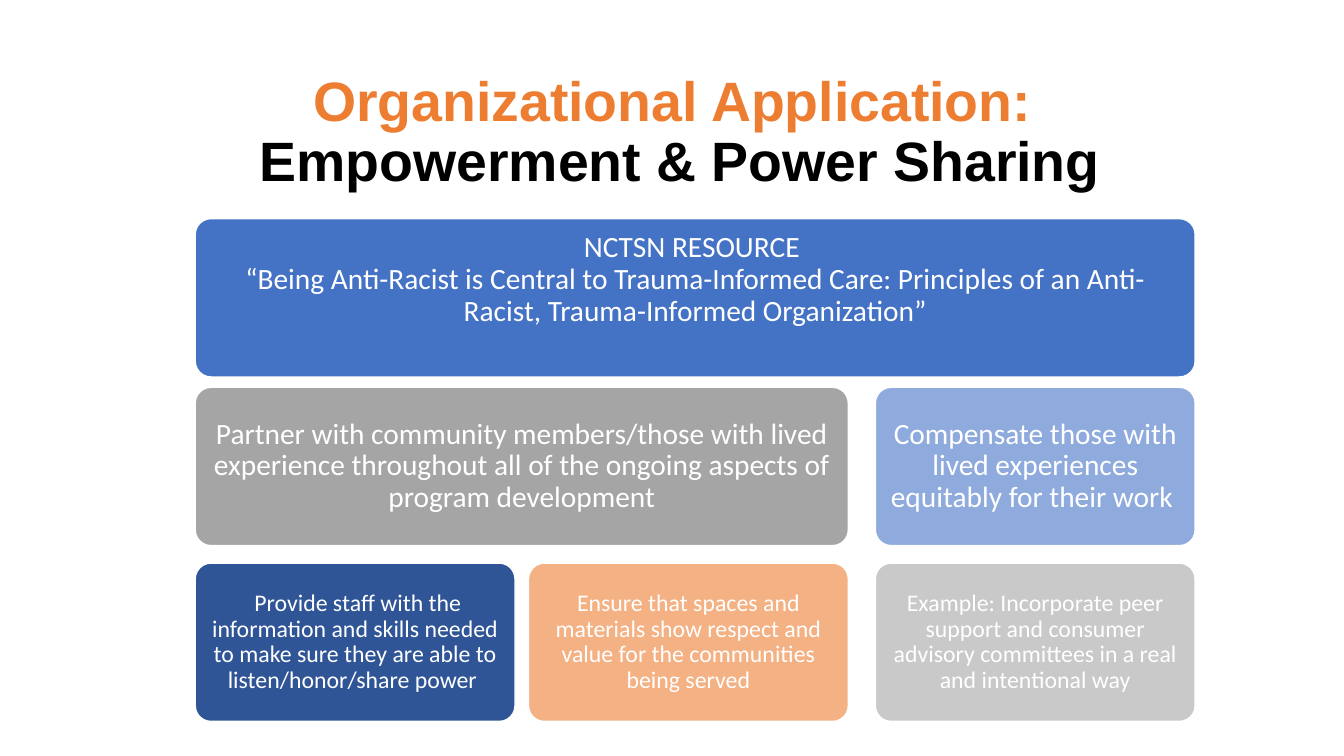
from pptx import Presentation
from pptx.dml.color import RGBColor
from pptx.enum.shapes import MSO_SHAPE
from pptx.enum.text import MSO_ANCHOR, PP_ALIGN
from pptx.util import Cm, Pt

ROUNDED = MSO_SHAPE.ROUNDED_RECTANGLE
MIDDLE = MSO_ANCHOR.MIDDLE
CENTER = PP_ALIGN.CENTER

CARD_WIDTH = 8.06
CARD_HEIGHT = 3.99
PAIR_GAP = 0.34
GROUP_GAP = 0.68
ROW_TOPS = (5.51, 9.76, 14.19)
LARGE, SMALL = 21, 17


def color(hex_string):
    return RGBColor.from_string(hex_string)


def add_lines(text_frame, lines, font_name, size, bold=False):
    text_frame.word_wrap = True
    text_frame.vertical_anchor = MIDDLE
    paragraph = text_frame.paragraphs[0]
    paragraph.alignment = CENTER
    paragraph.line_spacing = 0.9
    for index, (text, text_color) in enumerate(lines):
        if index:
            paragraph.add_line_break()
        run = paragraph.add_run()
        run.text = text
        run.font.name = font_name
        run.font.size = Pt(size)
        run.font.bold = bold
        run.font.color.rgb = color(text_color)


def add_title(slide, left, top, width, height):
    box = slide.shapes.add_textbox(Cm(left), Cm(top), Cm(width), Cm(height))
    lines = [("Organizational Application:", "ED7D31"),
             (" Empowerment & Power Sharing", "000000")]
    add_lines(box.text_frame, lines, "Arial", 39.6, bold=True)


def add_card(slide, left, top, width, fill, size, lines, extra_bottom=0):
    card = slide.shapes.add_shape(ROUNDED, Cm(left), Cm(top), Cm(width), Cm(CARD_HEIGHT))
    card.adjustments[0] = 0.1
    card.shadow.inherit = False
    card.fill.solid()
    card.fill.fore_color.rgb = color(fill)
    card.line.color.rgb = color("FFFFFF")
    card.line.width = Pt(1)
    text_frame = card.text_frame
    inset = 0.23 if size == LARGE else 0.18
    text_frame.margin_left = text_frame.margin_right = text_frame.margin_top = Cm(inset)
    text_frame.margin_bottom = Cm(inset + extra_bottom)
    add_lines(text_frame, [(line, "FFFFFF") for line in lines], "Calibri", size)


def add_hierarchy(slide, left):
    pair_width = 2 * CARD_WIDTH + PAIR_GAP
    second = left + CARD_WIDTH + PAIR_GAP
    third = left + pair_width + GROUP_GAP
    full_width = pair_width + GROUP_GAP + CARD_WIDTH
    resource_row, partner_row, action_row = ROW_TOPS

    add_card(slide, left, resource_row, full_width, "4472C4", LARGE,
             ["NCTSN RESOURCE ",
              "“Being Anti-Racist is Central to Trauma-Informed Care: "
              "Principles of an Anti-Racist, Trauma-Informed Organization”"],
             extra_bottom=0.9)
    add_card(slide, left, partner_row, pair_width, "A5A5A5", LARGE,
             ["Partner with community members/those with lived experience "
              "throughout all of the ongoing aspects of program development"])
    add_card(slide, third, partner_row, CARD_WIDTH, "8FAADC", LARGE,
             ["Compensate those with lived experiences equitably for their work "])

    actions = [
        (left, "2F5597", " Provide staff with the information and skills needed "
                         "to make sure they are able to listen/honor/share power "),
        (second, "F4B183", "Ensure that spaces and materials show respect and "
                           "value for the communities being served"),
        (third, "C9C9C9", "Example: Incorporate peer support and consumer "
                          "advisory committees in a real and intentional way"),
    ]
    for action_left, fill, text in actions:
        add_card(slide, action_left, action_row, CARD_WIDTH, fill, SMALL, [text])


def main():
    presentation = Presentation()
    presentation.slide_width = Cm(33.87)
    presentation.slide_height = Cm(19.05)
    slide = presentation.slides.add_slide(presentation.slide_layouts[6])
    add_title(slide, 2.34, 2.03, 29.21, 2.67)
    add_hierarchy(slide, 4.92)
    presentation.save("out.pptx")


if __name__ == "__main__":
    main()
